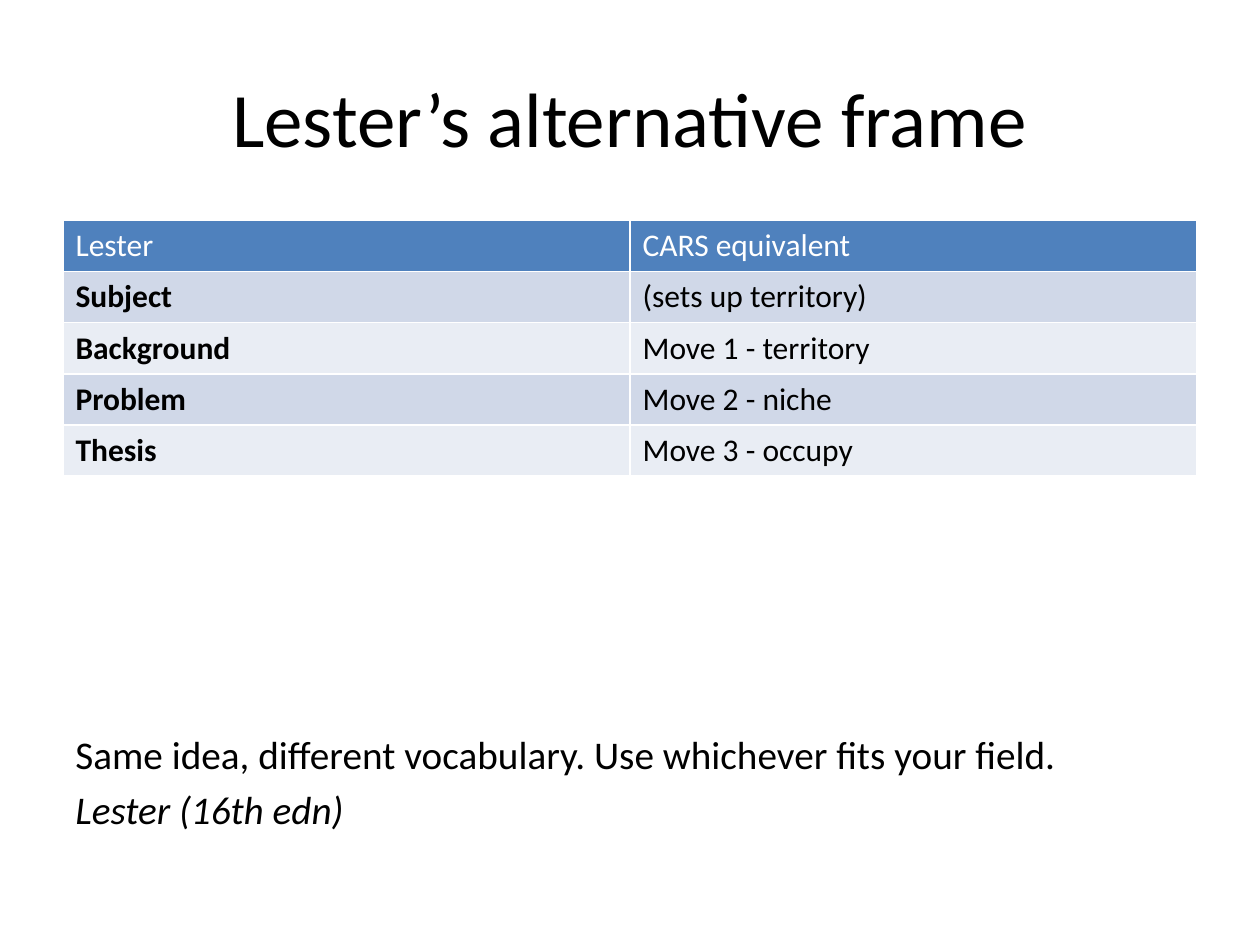
import pptx
import pptx.dml.color
import pptx.enum.text
import pptx.util

Inches, Pt = pptx.util.Inches, pptx.util.Pt
RGBColor = pptx.dml.color.RGBColor

# Content
TITLE = "Lester’s alternative frame"
ROWS = [
    ("Lester", "CARS equivalent"),
    ("Subject", "(sets up territory)"),
    ("Background", "Move 1 - territory"),
    ("Problem", "Move 2 - niche"),
    ("Thesis", "Move 3 - occupy"),
]
NOTES = [  # text, italic
    ("Same idea, different vocabulary. Use whichever fits your field.", False),
    ("Lester (16th edn)", True),
]

# Style
FONT = "Calibri"
BLACK = RGBColor(0x00, 0x00, 0x00)
WHITE = RGBColor(0xFF, 0xFF, 0xFF)
HEADER_FILL = RGBColor(0x4F, 0x81, 0xBD)
BAND_FILLS = (RGBColor(0xD0, 0xD8, 0xE8), RGBColor(0xE9, 0xED, 0xF4))
LEFT, WIDTH = Inches(0.5), Inches(9)
ROW_HEIGHT = Inches(0.4)


def add_run(paragraph, text, size, color=BLACK, bold=False, italic=False):
    run = paragraph.add_run()
    run.text = text
    run.font.name = FONT
    run.font.size = Pt(size)
    run.font.color.rgb = color
    run.font.bold = bold
    run.font.italic = italic


presentation = pptx.Presentation()
presentation.slide_width, presentation.slide_height = Inches(10), Inches(7.5)
slide = presentation.slides.add_slide(presentation.slide_layouts[5])

# Title
title = slide.shapes.title
title.left, title.top, title.width, title.height = LEFT, Inches(0.3), WIDTH, Inches(1.25)
title.text_frame.vertical_anchor = pptx.enum.text.MSO_ANCHOR.MIDDLE
title_paragraph = title.text_frame.paragraphs[0]
title_paragraph.alignment = pptx.enum.text.PP_ALIGN.CENTER
add_run(title_paragraph, TITLE, 44)

# Comparison table
table = slide.shapes.add_table(
    len(ROWS), len(ROWS[0]), LEFT, Inches(1.75), WIDTH, ROW_HEIGHT * len(ROWS)
).table
for row_index, row in enumerate(ROWS):
    is_header = row_index == 0
    for column_index, text in enumerate(row):
        cell = table.cell(row_index, column_index)
        cell.fill.solid()
        cell.fill.fore_color.rgb = HEADER_FILL if is_header else BAND_FILLS[(row_index - 1) % 2]
        add_run(
            cell.text_frame.paragraphs[0], text, 18,
            color=WHITE if is_header else BLACK,
            bold=not is_header and column_index == 0,
        )

# Closing remarks
remarks = slide.shapes.add_textbox(LEFT, Inches(5.75), WIDTH, Inches(0.82)).text_frame
remarks.word_wrap = True
for index, (text, italic) in enumerate(NOTES):
    paragraph = remarks.add_paragraph() if index else remarks.paragraphs[0]
    if index:
        paragraph.space_before = Pt(4.5)
    add_run(paragraph, text, 22.4, italic=italic)

presentation.save("out.pptx")
